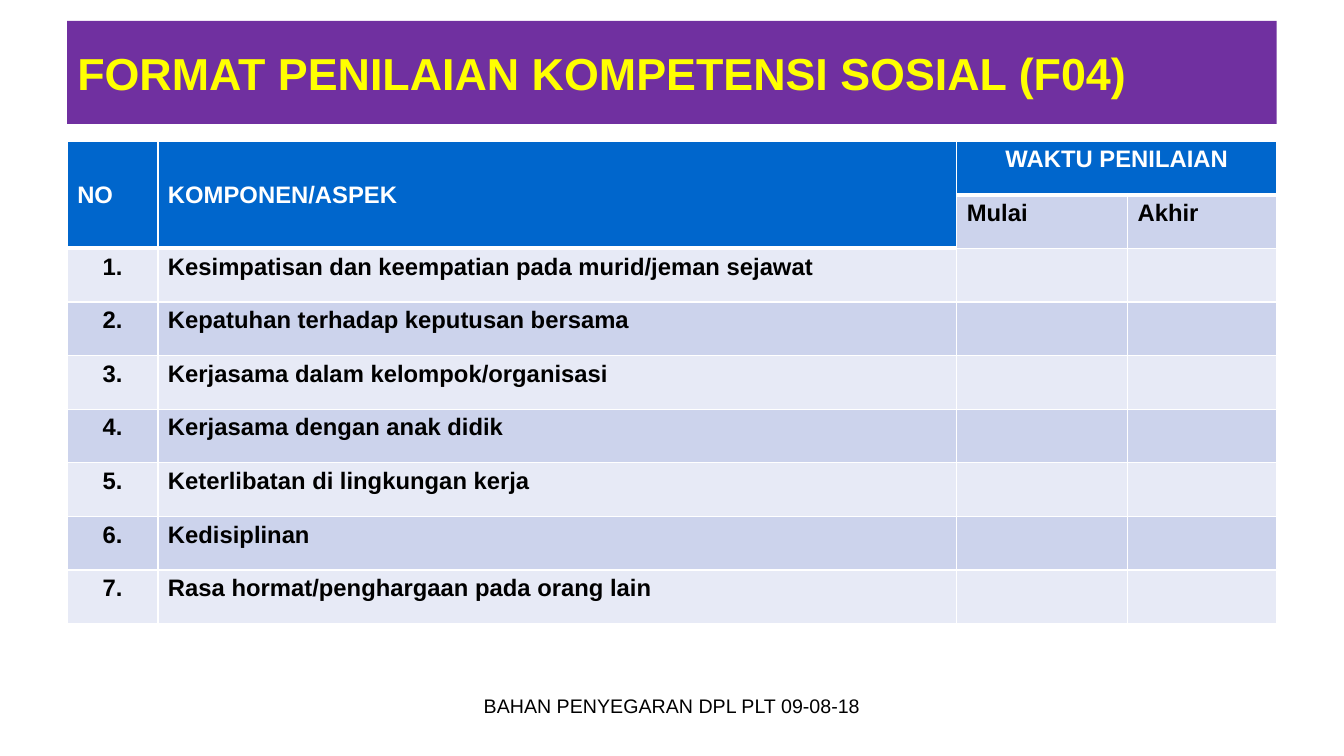
from lxml import etree
from pptx import Presentation
from pptx.dml.color import RGBColor
from pptx.enum.text import MSO_ANCHOR as Anchor, PP_ALIGN as Align
from pptx.oxml.ns import qn
from pptx.util import Pt

FONT = "Arial"
WHITE, BLACK, YELLOW = "FFFFFF", "000000", "FFFF00"
PURPLE, BLUE, OUTLINE = "7030A0", "0066CC", "3399FF"
BANDS = ("E7EAF6", "CCD3EC")
COLUMN_WIDTHS = (64.8, 570.6, 122, 106.6)
ROW_HEIGHT = 38.32
ASPECTS = (
    "Kesimpatisan dan keempatian pada murid/jeman sejawat",
    "Kepatuhan terhadap keputusan bersama",
    "Kerjasama dalam kelompok/organisasi",
    "Kerjasama dengan anak didik",
    "Keterlibatan di lingkungan kerja",
    "Kedisiplinan",
    "Rasa hormat/penghargaan pada orang lain",
)


def color(value):
    return RGBColor.from_string(value)


def line_element(tag, width, value):
    line = etree.Element(qn(tag), w=str(Pt(width)))
    fill = etree.SubElement(line, qn("a:solidFill"))
    etree.SubElement(fill, qn("a:srgbClr"), val=value)
    return line


def write(text_frame, text, size, text_color, bold=False, align=Align.LEFT):
    text_frame.text = text
    paragraph = text_frame.paragraphs[0]
    paragraph.alignment = align
    font = paragraph.runs[0].font if paragraph.runs else paragraph.font
    font.name = FONT
    font.size = Pt(size)
    font.bold = bold
    font.color.rgb = color(text_color)


def place(shape, left, top, width, height):
    shape.left, shape.top = Pt(left), Pt(top)
    shape.width, shape.height = Pt(width), Pt(height)


def add_title(slide, left, top, width, height):
    title = slide.shapes.title
    place(title, left, top, width, height)
    title.fill.solid()
    title.fill.fore_color.rgb = color(PURPLE)
    frame = title.text_frame
    frame.word_wrap = True
    frame.vertical_anchor = Anchor.MIDDLE
    write(frame, "FORMAT PENILAIAN KOMPETENSI SOSIAL (F04)", 32, YELLOW, True)
    run_properties = frame.paragraphs[0].runs[0].font._element
    run_properties.insert(0, line_element("a:ln", 1.75, OUTLINE))


def style_cell(cell, fill, top=1, bottom=1):
    """Fill the cell and give it white borders; top and bottom are widths."""
    cell.fill.solid()
    cell.fill.fore_color.rgb = color(fill)
    properties = cell._tc.get_or_add_tcPr()
    borders = (("a:lnL", 1), ("a:lnR", 1), ("a:lnT", top), ("a:lnB", bottom))
    for index, (tag, width) in enumerate(borders):
        properties.insert(index, line_element(tag, width, WHITE))


def add_assessment_table(slide, left, top):
    rows = [("NO", "KOMPONEN/ASPEK", "WAKTU PENILAIAN", ""),
            ("", "", "Mulai", "Akhir")]
    rows += [(f"{number}.", aspect, "", "")
             for number, aspect in enumerate(ASPECTS, 1)]
    table = slide.shapes.add_table(
        len(rows), len(COLUMN_WIDTHS), Pt(left), Pt(top),
        Pt(sum(COLUMN_WIDTHS)), Pt(ROW_HEIGHT * len(rows))).table
    for column, width in zip(table.columns, COLUMN_WIDTHS):
        column.width = Pt(width)
    for row in table.rows:
        row.height = Pt(ROW_HEIGHT)

    for row_index, texts in enumerate(rows):
        for column_index, text in enumerate(texts):
            cell = table.cell(row_index, column_index)
            header_rows = 2 if column_index < 2 else 1
            header = row_index < header_rows
            centered = text == "WAKTU PENILAIAN" or (
                column_index == 0 and not header)
            write(cell.text_frame, text, 17, WHITE if header else BLACK, True,
                  Align.CENTER if centered else Align.LEFT)
            style_cell(cell, BLUE if header else BANDS[row_index % 2],
                       top=3 if row_index == header_rows else 1,
                       bottom=3 if row_index == header_rows - 1 else 1)

    for column_index in (0, 1):
        cell = table.cell(0, column_index)
        cell.merge(table.cell(1, column_index))
        cell.vertical_anchor = Anchor.MIDDLE
    table.cell(0, 2).merge(table.cell(0, 3))


def add_footer(slide, left, top, width, height):
    footer = slide.shapes.add_textbox(Pt(left), Pt(top), Pt(width), Pt(height))
    footer.text_frame.word_wrap = True
    write(footer.text_frame, "BAHAN PENYEGARAN DPL PLT 09-08-18", 14, BLACK,
          align=Align.CENTER)


def main():
    presentation = Presentation()
    presentation.slide_width, presentation.slide_height = Pt(960), Pt(540)
    slide = presentation.slides.add_slide(presentation.slide_layouts[5])
    add_title(slide, 48, 15, 864, 73.5)
    add_assessment_table(slide, 48, 100.8)
    add_footer(slide, 328, 492, 304, 37.5)
    presentation.save("out.pptx")


if __name__ == "__main__":
    main()
